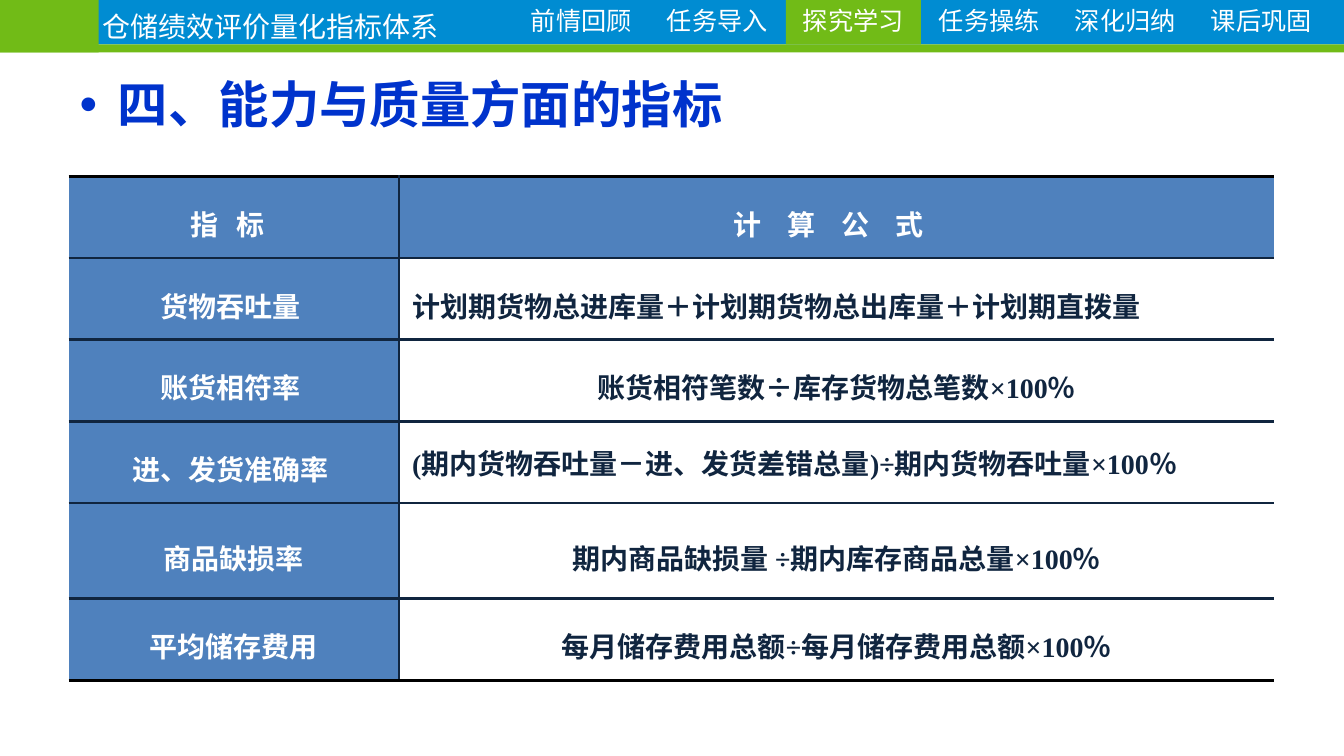
import pptx
import pptx.dml.color
import pptx.enum.shapes
import pptx.enum.text
import pptx.oxml
import pptx.oxml.ns
import pptx.util
from pptx.util import Inches

CJK, SERIF = "Noto Sans CJK SC", "Times New Roman"
WHITE, NAVY, GREEN, SKY, STEEL, BLACK = "FFFFFF", "10253F", "71BB17", "008CD2", "4F81BD", "000000"
CENTER, LEFT = pptx.enum.text.PP_ALIGN.CENTER, pptx.enum.text.PP_ALIGN.LEFT
MIDDLE = pptx.enum.text.MSO_ANCHOR.MIDDLE
RECTANGLE = pptx.enum.shapes.MSO_SHAPE.RECTANGLE
rgb = pptx.dml.color.RGBColor.from_string


def add_run(paragraph, text, size, color, font=CJK, bold=False, spacing=0):
    run = paragraph.add_run()
    run.text = text
    run.font.size = pptx.util.Pt(size)
    run.font.bold = bold
    run.font.color.rgb = rgb(color)
    run.font.name = font
    properties = run.font._element
    if spacing:
        properties.set("spc", str(spacing * 100))
    east_asian = pptx.oxml.parse_xml(f'<a:ea {pptx.oxml.ns.nsdecls("a")} typeface="{CJK}"/>')
    properties.find(pptx.oxml.ns.qn("a:latin")).addnext(east_asian)


def add_bar(left, top, width, height, color):
    bar = slide.shapes.add_shape(RECTANGLE, Inches(left), Inches(top), Inches(width), Inches(height))
    bar.shadow.inherit = False
    bar.fill.solid()
    bar.fill.fore_color.rgb = rgb(color)
    bar.line.fill.background()
    return bar


deck = pptx.Presentation()
deck.slide_width, deck.slide_height = Inches(13.34), Inches(7.5)
slide = deck.slides.add_slide(deck.slide_layouts[5])

add_bar(0, -0.03, 13.34, 0.47, SKY)
add_bar(0, 0.44, 13.34, 0.08, GREEN)
add_bar(0, -0.03, 0.98, 0.55, GREEN)

steps = ["前情回顾", "任务导入", "探究学习", "任务操练", "深化归纳", "课后巩固"]
for index, step in enumerate(steps):
    left = 5.1 + 1.35 * index
    if step == "探究学习":
        tab = add_bar(left, -0.03, 1.34, 0.47, GREEN)
    else:
        tab = slide.shapes.add_textbox(Inches(left), Inches(-0.03), Inches(1.34), Inches(0.47))
    tab.text_frame.word_wrap = True
    tab.text_frame.vertical_anchor = MIDDLE
    label = tab.text_frame.paragraphs[0]
    label.alignment = CENTER
    add_run(label, step, 18, WHITE)

topic = slide.shapes.add_textbox(Inches(0.92), Inches(-0.06), Inches(7.96), Inches(0.54))
topic.text_frame.word_wrap = True
topic.text_frame.vertical_anchor = MIDDLE
topic.text_frame.paragraphs[0].line_spacing = 1.3
add_run(topic.text_frame.paragraphs[0], "仓储绩效评价量化指标体系", 20, WHITE)

title = slide.shapes.title
title.left, title.top, title.width, title.height = Inches(0.69), Inches(0.68), Inches(11.98), Inches(0.71)
title.text_frame.vertical_anchor = pptx.enum.text.MSO_ANCHOR.TOP
heading = title.text_frame.paragraphs[0]
heading.alignment = LEFT
heading_properties = heading._p.get_or_add_pPr()
heading_properties.set("marL", str(Inches(0.38)))
heading_properties.set("indent", str(Inches(-0.38)))
for bullet in ('buFont typeface="Arial"', 'buChar char="•"'):
    heading_properties.append(pptx.oxml.parse_xml(f'<a:{bullet} {pptx.oxml.ns.nsdecls("a")}/>'))
add_run(heading, "四、能力与质量方面的指标", 36, "0033CC", "Calibri", True)

indicators = [
    ("指 标 ", [("计 算 公 式 ", CJK)], CENTER),
    ("货物吞吐量 ", [("计划期货物总进库量＋计划期货物总出库量＋计划期直拨量", CJK)], LEFT),
    ("账货相符率 ", [("账货相符笔数", SERIF), ("÷", CJK), ("库存货物总笔数×100％", SERIF)], CENTER),
    ("进、发货准确率 ", [("(期内货物吞吐量－进、发货差错总量)÷期内货物吞吐量×100％", SERIF)], LEFT),
    ("商品缺损率", [("期内商品缺损量 ÷期内库存商品总量×100％", SERIF)], CENTER),
    ("平均储存费用", [("每月储存费用总额÷每月储存费用总额×100％", SERIF)], CENTER),
]
row_heights = [0.81, 0.81, 0.81, 0.81, 0.95, 0.81]
last = len(indicators) - 1
table = slide.shapes.add_table(
    len(indicators), 2, Inches(0.68), Inches(1.75), Inches(11.97), Inches(sum(row_heights))
).table
table.first_row = table.horz_banding = False
table.columns[0].width, table.columns[1].width = Inches(3.28), Inches(8.69)

for row, (indicator, formula, formula_alignment) in enumerate(indicators):
    table.rows[row].height = Inches(row_heights[row])
    for column, runs in enumerate([[(indicator, CJK)], formula]):
        cell = table.cell(row, column)
        cell.vertical_anchor = MIDDLE
        cell.margin_left = cell.margin_right = Inches(0.13)
        cell.margin_top = cell.margin_bottom = Inches(0.05)
        borders = {
            "L": NAVY if column else None,
            "R": None if column else NAVY,
            "T": NAVY if row else BLACK,
            "B": BLACK if row == last else NAVY,
        }
        for side, color in borders.items():
            width = pptx.util.Pt(2 if color == BLACK else 2.25)
            paint = f'<a:solidFill><a:srgbClr val="{color}"/></a:solidFill>' if color else "<a:noFill/>"
            cell._tc.get_or_add_tcPr().append(pptx.oxml.parse_xml(
                f'<a:ln{side} {pptx.oxml.ns.nsdecls("a")} w="{int(width)}">{paint}</a:ln{side}>'))
        shaded = row == 0 or column == 0
        cell.fill.solid()
        cell.fill.fore_color.rgb = rgb(STEEL if shaded else WHITE)
        paragraph = cell.text_frame.paragraphs[0]
        paragraph.alignment = formula_alignment if column else CENTER
        paragraph.line_spacing = 1.0 if row == 3 and column else 1.3
        spacing = (4, 7)[column] if row == 0 else 0
        for text, font in runs:
            add_run(paragraph, text, 20, WHITE if shaded else NAVY, font, True, spacing)

deck.save("out.pptx")
